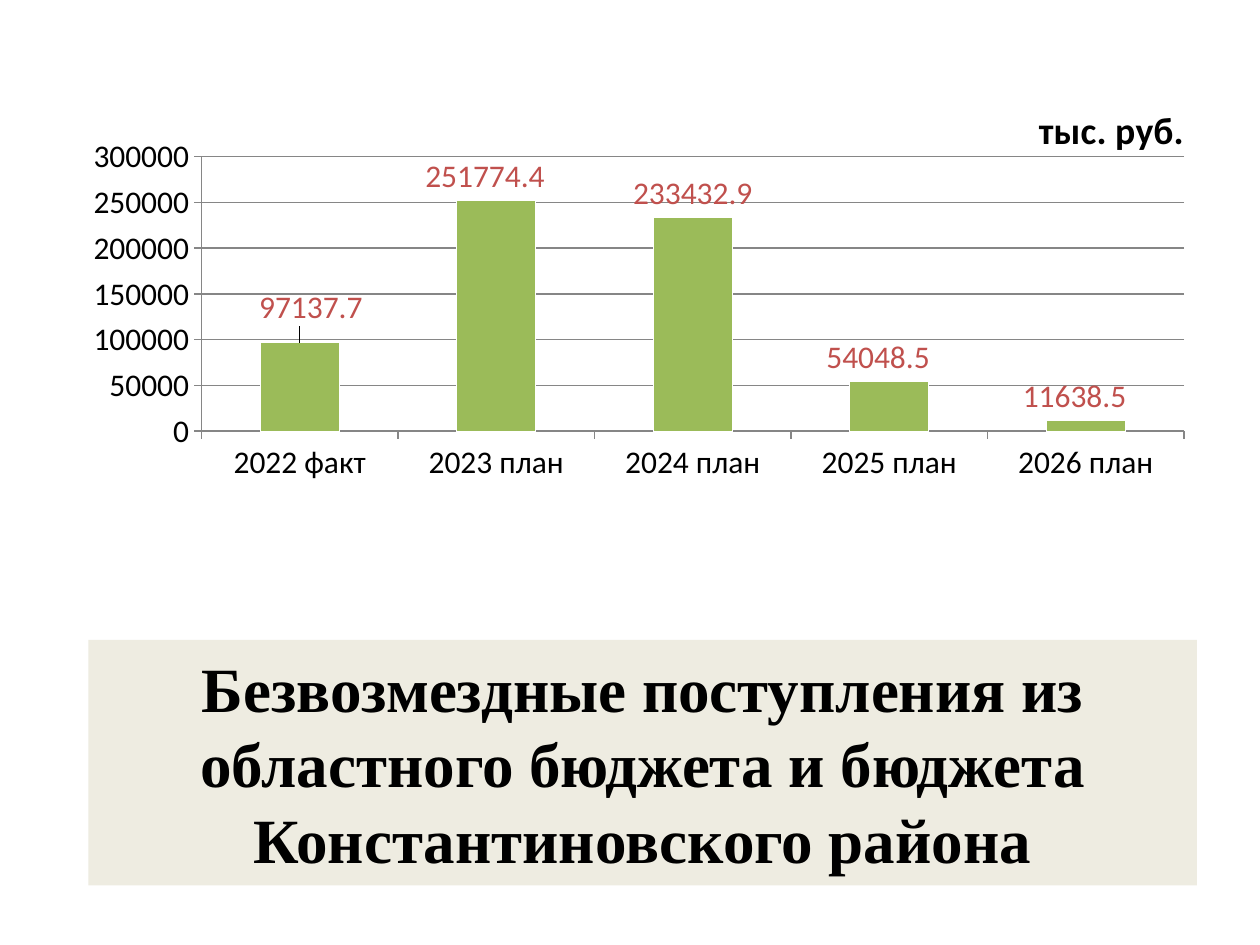
from typing import NamedTuple

from lxml import etree
from pptx import Presentation
from pptx.chart.data import CategoryChartData
from pptx.dml.color import RGBColor
from pptx.enum.chart import XL_CHART_TYPE, XL_LABEL_POSITION, XL_TICK_MARK
from pptx.enum.text import MSO_ANCHOR, PP_ALIGN
from pptx.oxml.ns import qn
from pptx.util import Cm, Pt

COLUMN = XL_CHART_TYPE.COLUMN_CLUSTERED
OUTSIDE_END = XL_LABEL_POSITION.OUTSIDE_END
TICK_OUT = XL_TICK_MARK.OUTSIDE
MIDDLE = MSO_ANCHOR.MIDDLE
CENTER = PP_ALIGN.CENTER

BLACK = RGBColor(0x00, 0x00, 0x00)
WHITE = RGBColor(0xFF, 0xFF, 0xFF)
BEIGE = RGBColor(0xEE, 0xEC, 0xE1)
GREEN = RGBColor(0x9B, 0xBB, 0x59)
RED = RGBColor(0xC0, 0x50, 0x4D)
GRAY = RGBColor(0x86, 0x86, 0x86)


class Receipt(NamedTuple):
    year: str
    amount: float
    label_dx: float
    label_dy: float


RECEIPTS = [
    Receipt("2022 факт", 97137.7, 0.01, -0.02),
    Receipt("2023 план", 251774.4, -0.01, 0),
    Receipt("2024 план", 233432.9, 0, 0),
    Receipt("2025 план", 54048.5, -0.01, 0),
    Receipt("2026 план", 11638.5, -0.01, 0),
]


def set_layout(parent, index: int, **values) -> None:
    """Give a chart part a manual layout, as its child number index."""
    for old in parent.findall(qn("c:layout")):
        parent.remove(old)
    layout = etree.Element(qn("c:layout"))
    manual = etree.SubElement(layout, qn("c:manualLayout"))
    for name, value in values.items():
        etree.SubElement(manual, qn(f"c:{name}")).set("val", str(value))
    parent.insert(index, layout)


def style_axis(axis) -> None:
    axis.major_tick_mark = TICK_OUT
    axis.format.line.color.rgb = GRAY
    axis.format.line.width = Pt(0.75)


def add_receipts_chart(s) -> None:
    data = CategoryChartData()
    data.categories = [receipt.year for receipt in RECEIPTS]
    data.add_series("Series 1", [receipt.amount for receipt in RECEIPTS])
    chart = s.shapes.add_chart(
        COLUMN, Cm(1.45), Cm(1.27), Cm(22.56), Cm(11.18), data).chart
    chart.font.name = "Calibri"
    chart.font.size = Pt(18)
    chart.font.color.rgb = BLACK
    chart.has_legend = False

    title = chart.chart_title
    title.text_frame.text = "тыс. руб."
    font = title.text_frame.paragraphs[0].runs[0].font
    font.name, font.size, font.bold = "Calibri", Pt(21.6), True
    font.color.rgb = BLACK
    title.include_in_layout = False
    set_layout(title.element, 1, xMode="edge", yMode="edge", x=0.86, y=0.06)

    style_axis(chart.category_axis)
    values = chart.value_axis
    style_axis(values)
    values.minimum_scale, values.maximum_scale = 0, 300000
    values.major_unit = 50000
    values.major_gridlines.format.line.color.rgb = GRAY
    values.major_gridlines.format.line.width = Pt(0.75)

    plot = chart.plots[0]
    plot.vary_by_categories = False
    plot.gap_width = 150
    series = plot.series[0]
    series.format.fill.solid()
    series.format.fill.fore_color.rgb = GREEN
    series.format.line.color.rgb = WHITE
    for i in range(len(RECEIPTS)):
        label = series.points[i].data_label
        label.font.size = Pt(18)
        label.font.color.rgb = RED
        label.position = OUTSIDE_END
    for receipt, label in zip(RECEIPTS, series._element.iter(qn("c:dLbl"))):
        set_layout(label, 1, x=receipt.label_dx, y=receipt.label_dy)

    set_layout(plot._element.getparent(), 0, layoutTarget="inner",
               xMode="edge", yMode="edge", x=0.116, y=0.169, w=0.88, h=0.495)


def fill_title(s) -> None:
    sp = s.shapes.title
    sp.left, sp.top, sp.width, sp.height = Cm(1.78), Cm(12.9), Cm(22.35), Cm(4.95)
    sp.fill.solid()
    sp.fill.fore_color.rgb = BEIGE
    tf = sp.text_frame
    tf.text = ("Безвозмездные поступления из областного бюджета "
               "и бюджета Константиновского района")
    tf.word_wrap = True
    tf.vertical_anchor = MIDDLE
    p = tf.paragraphs[0]
    p.alignment = CENTER
    font = p.runs[0].font
    font.name, font.size, font.bold = "Times New Roman", Pt(36), True
    font.color.rgb = BLACK


def main() -> None:
    prs = Presentation()
    prs.slide_width, prs.slide_height = Cm(25.4), Cm(19.05)
    s = prs.slides.add_slide(prs.slide_layouts[5])
    fill_title(s)
    add_receipts_chart(s)
    prs.save("out.pptx")


if __name__ == "__main__":
    main()
